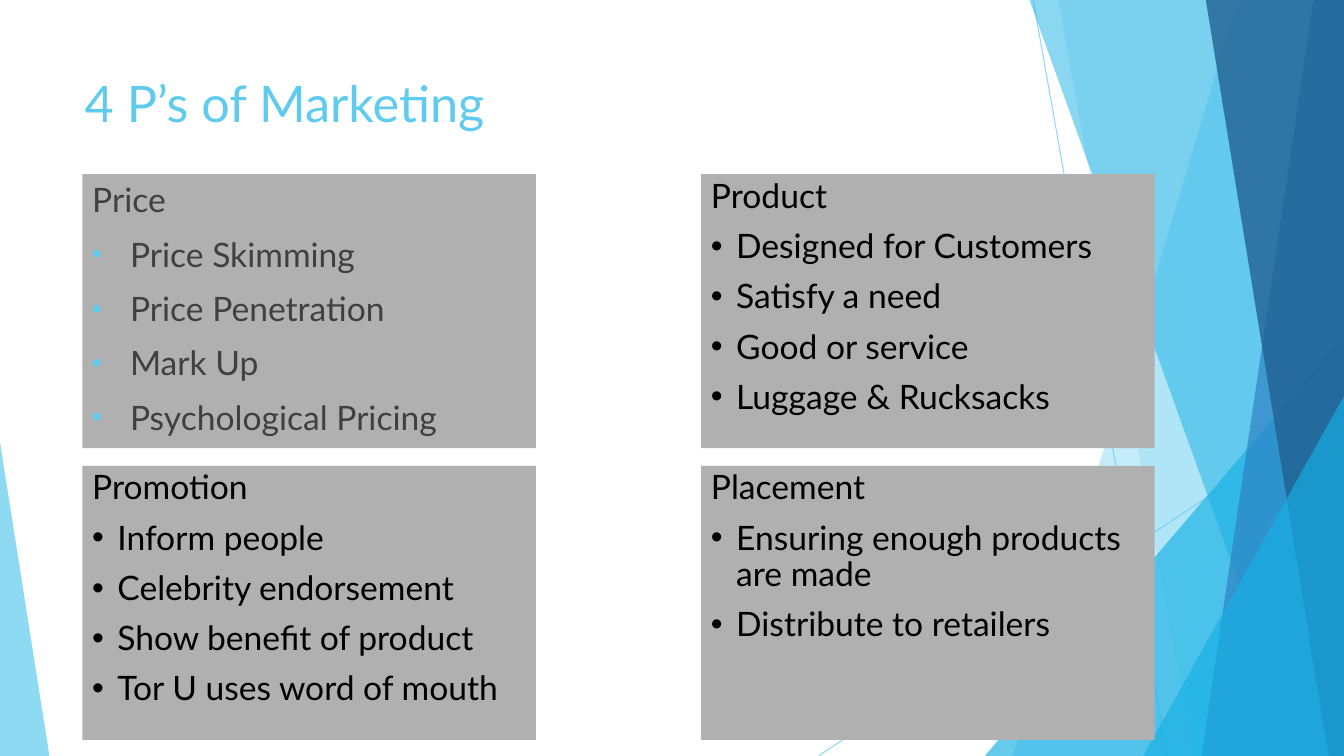
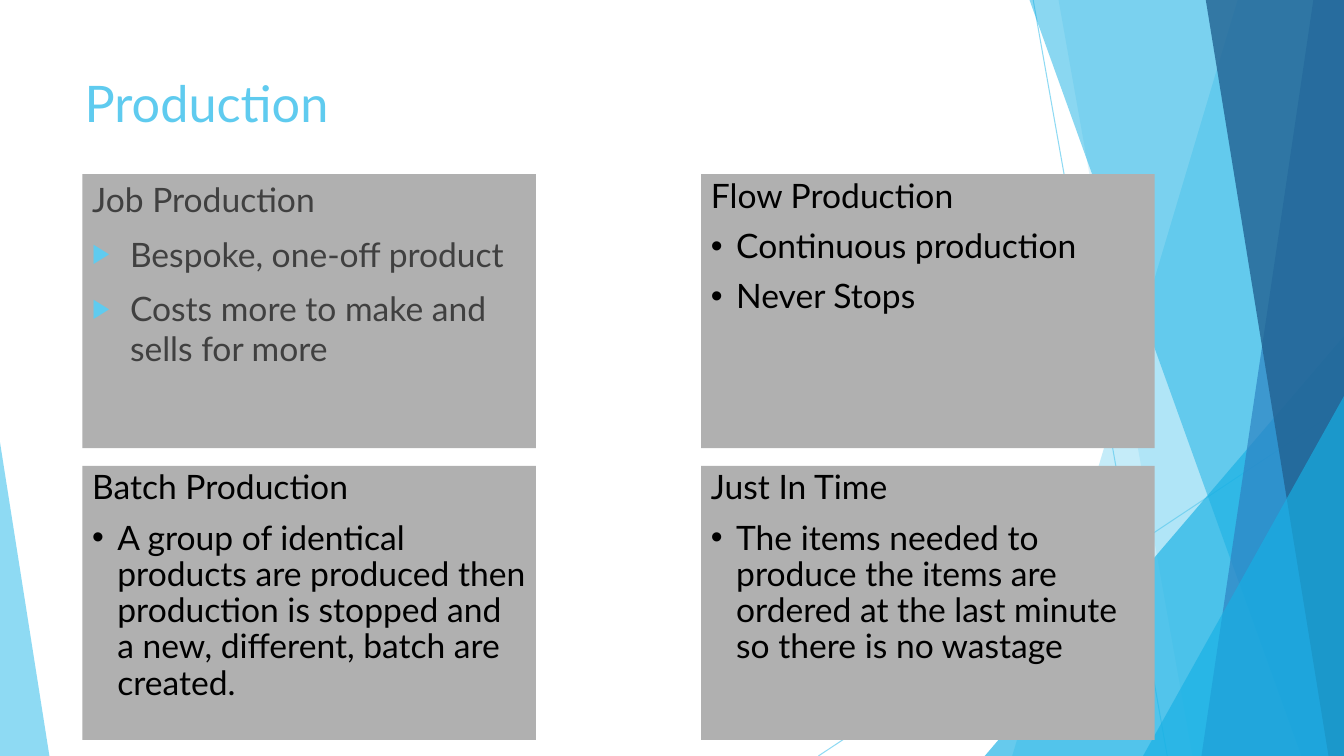
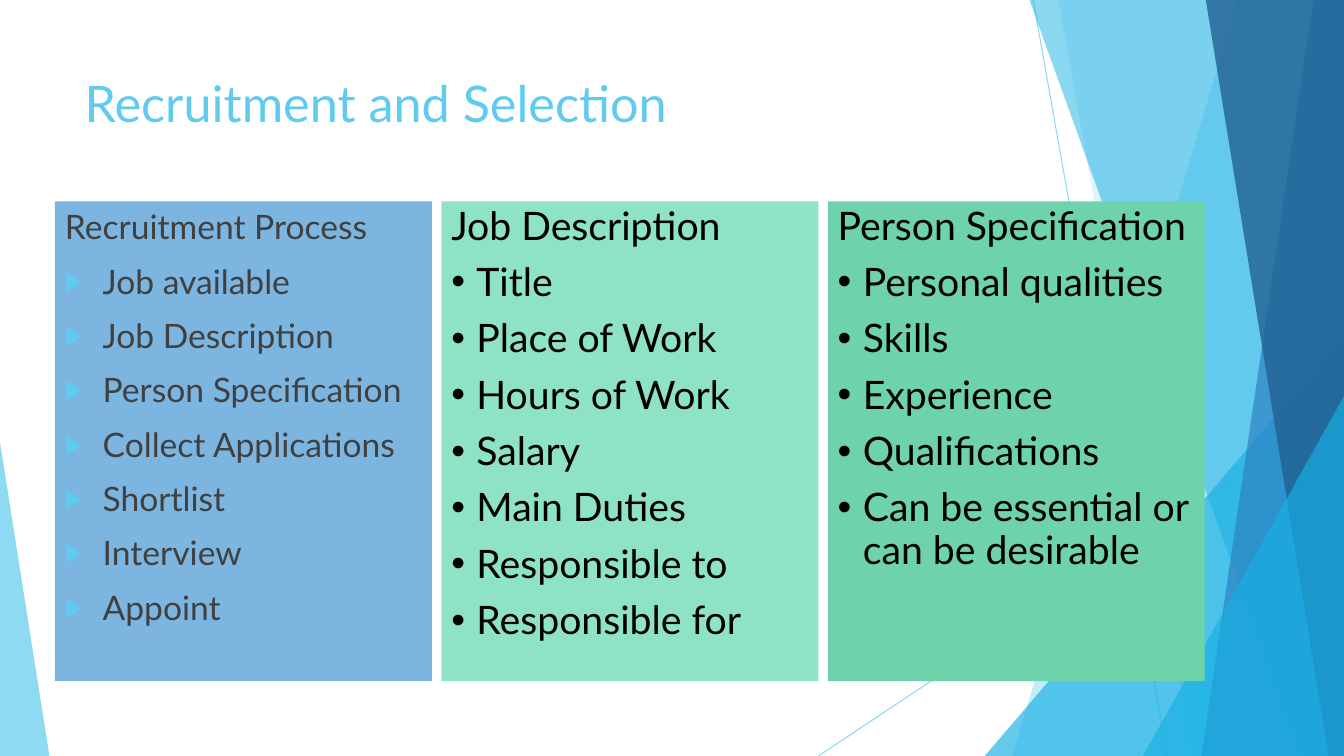
from collections import namedtuple

from lxml import etree
from pptx import Presentation
from pptx.dml.color import RGBColor
from pptx.enum.shapes import MSO_CONNECTOR, MSO_SHAPE
from pptx.enum.text import MSO_ANCHOR, PP_ALIGN
from pptx.oxml.ns import qn
from pptx.util import Pt

STRAIGHT = MSO_CONNECTOR.STRAIGHT
RECTANGLE = MSO_SHAPE.RECTANGLE
TRIANGLE = MSO_SHAPE.ISOSCELES_TRIANGLE
TOP = MSO_ANCHOR.TOP
LEFT = PP_ALIGN.LEFT

SKY = RGBColor(0x5F, 0xCB, 0xEF)
CYAN = RGBColor(0x17, 0xB0, 0xE4)
BLUE = RGBColor(0x2E, 0x83, 0xC3)
NAVY = RGBColor(0x22, 0x62, 0x92)
GREY = RGBColor(0xB0, 0xB0, 0xB0)
PALE_BLUE = RGBColor(0x7C, 0xB5, 0xE0)
MINT = RGBColor(0x8E, 0xE3, 0xC7)
GREEN = RGBColor(0x6E, 0xD2, 0xAA)
CHARCOAL = RGBColor(0x40, 0x40, 0x40)
BLACK = RGBColor(0x00, 0x00, 0x00)

FONT = "Lato"
WIDTH, HEIGHT = 960, 540
BAND_TOP = -0.6

Box = namedtuple("Box", "left top width height")
ListStyle = namedtuple("ListStyle", "mark indent color spacing mark_color")
Panel = namedtuple("Panel", "heading items style size fill")

SQUARE = ListStyle("▪", 27, CHARCOAL, 1.0, SKY)
ARROW = ListStyle("▶", 27, CHARCOAL, 1.0, SKY)
DOT = ListStyle("•", 18, BLACK, 0.9, None)

QUADRANTS = [
    Box(58.8 + 442 * column, 124.4 + 208.3 * row, 324, 195.8)
    for row in range(2) for column in range(2)
]
COLUMNS = [Box(39.3 + 276 * column, 143.8, 269.3, 342.8) for column in range(3)]

SLIDES = [
    ("4 P’s of Marketing", QUADRANTS, [
        Panel("Price", ["Price Skimming", "Price Penetration", "Mark Up",
                        "Psychological Pricing"], SQUARE, 24, GREY),
        Panel("Product", ["Designed for Customers", "Satisfy a need", "Good or service",
                          "Luggage & Rucksacks"], DOT, 24, GREY),
        Panel("Promotion", ["Inform people", "Celebrity endorsement",
                            "Show benefit of product",
                            "Tor U uses word of mouth"], DOT, 24, GREY),
        Panel("Placement", ["Ensuring enough products are made",
                            "Distribute to retailers"], DOT, 24, GREY),
    ]),
    ("Production", QUADRANTS, [
        Panel("Job Production", ["Bespoke, one-off product",
                                 "Costs more to make and sells for more"], ARROW, 24, GREY),
        Panel("Flow Production", ["Continuous production", "Never Stops"], DOT, 24, GREY),
        Panel("Batch Production", ["A group of identical products are produced then production "
                                   "is stopped and a new, different, batch are created."],
              DOT, 24, GREY),
        Panel("Just In Time", ["The items needed to produce the items are ordered at the "
                               "last minute so there is no wastage"], DOT, 24, GREY),
    ]),
    ("Recruitment and Selection", COLUMNS, [
        Panel("Recruitment Process", ["Job available", "Job Description", "Person Specification",
                                      "Collect Applications", "Shortlist", "Interview",
                                      "Appoint"], ARROW, 24, PALE_BLUE),
        Panel("Job Description", ["Title", "Place of Work", "Hours of Work", "Salary",
                                  "Main Duties", "Responsible to", "Responsible for"],
              DOT, 28, MINT),
        Panel("Person Specification", ["Personal qualities", "Skills", "Experience",
                                       "Qualifications", "Can be essential or can be desirable"],
              DOT, 28, GREEN),
    ]),
]


def set_opacity(shape, percent):
    """Make every colour of a shape partly transparent."""
    for color in shape.element.iter(qn("a:srgbClr")):
        etree.SubElement(color, qn("a:alpha")).set("val", str(percent * 1000))


def paint(shape, color, opacity=None):
    """Give a shape a plain fill with no outline or shadow."""
    shape.shadow.inherit = False
    shape.fill.solid()
    shape.fill.fore_color.rgb = color
    shape.line.fill.background()
    if opacity:
        set_opacity(shape, opacity)


def add_hairline(page, start_x, start_y, end_x, end_y):
    """Draw a thin translucent line."""
    line = page.shapes.add_connector(
        STRAIGHT, Pt(start_x), Pt(start_y), Pt(end_x), Pt(end_y))
    line.line.color.rgb = SKY
    line.line.width = Pt(0.75)
    set_opacity(line, 70)
    etree.SubElement(line.element.spPr, qn("a:effectLst"))


def add_band(page, top_x, bottom_x, color, opacity):
    """Fill from a slanted edge to the right side of the page."""
    outline = page.shapes.build_freeform(Pt(top_x), Pt(BAND_TOP))
    corners = [(WIDTH, BAND_TOP), (WIDTH, HEIGHT), (bottom_x, HEIGHT)]
    outline.add_line_segments([(Pt(x), Pt(y)) for x, y in corners], close=True)
    paint(outline.convert_to_shape(), color, opacity)


def add_corner(page, left, top, width, peak, color, opacity):
    """Draw a right triangle standing on the bottom of the page."""
    corner = page.shapes.add_shape(
        TRIANGLE, Pt(left), Pt(top), Pt(width), Pt(HEIGHT - top))
    corner.adjustments[0] = peak
    paint(corner, color, opacity)


def add_backdrop(page):
    """Draw the overlapping blue facets every slide shares."""
    add_hairline(page, 738, 0, 833.8, HEIGHT)
    add_hairline(page, WIDTH, 290.2, 584.6, HEIGHT)
    add_band(page, 884.2, 723, SKY, 36)
    add_band(page, 756, 851.8, SKY, 20)
    add_corner(page, 703.4, 240, 256.6, 1, CYAN, 66)
    add_band(page, 735.2, 929.5, CYAN, 50)
    add_band(page, 938.2, 858.2, BLUE, 70)
    add_band(page, 861.2, 949, NAVY, 80)
    add_corner(page, 816.5, 283, 143.5, 1, CYAN, 66)
    add_corner(page, 0, 316, 35.3, 0, SKY, 70)


def set_font(para, size, color):
    """Set the deck's typeface on a left-aligned paragraph."""
    para.alignment = LEFT
    para.font.name = FONT
    para.font.size = Pt(size)
    para.font.color.rgb = color


def add_title(page, text):
    """Place the slide title."""
    title = page.shapes.add_textbox(Pt(53.4), Pt(48), Pt(676.8), Pt(104))
    title.text_frame.word_wrap = True
    para = title.text_frame.paragraphs[0]
    para.text = text
    set_font(para, 36, SKY)


def add_bullet(para, style):
    """Give a paragraph a hanging bullet."""
    properties = para._p.get_or_add_pPr()
    properties.set("marL", str(Pt(style.indent)))
    properties.set("indent", str(-Pt(style.indent)))
    if style.mark_color:
        color = etree.SubElement(properties, qn("a:buClr"))
        etree.SubElement(color, qn("a:srgbClr")).set("val", str(style.mark_color))
        etree.SubElement(properties, qn("a:buSzPct")).set("val", "80000")
    etree.SubElement(properties, qn("a:buFont")).set("typeface", "Arial")
    etree.SubElement(properties, qn("a:buChar")).set("char", style.mark)


def add_panel(page, box, panel):
    """Fill a box with a heading and its bulleted list."""
    card = page.shapes.add_shape(RECTANGLE, *(Pt(length) for length in box))
    paint(card, panel.fill)
    frame = card.text_frame
    frame.word_wrap = True
    frame.vertical_anchor = TOP
    for index, text in enumerate([panel.heading, *panel.items]):
        para = frame.add_paragraph() if index else frame.paragraphs[0]
        para.text = text
        para.space_before = Pt(10)
        para.line_spacing = panel.style.spacing
        if index:
            add_bullet(para, panel.style)
        set_font(para, panel.size, panel.style.color)


def add_panel_slide(deck, title, boxes, panels):
    """Build one slide of panels under a title."""
    page = deck.slides.add_slide(deck.slide_layouts[6])
    add_backdrop(page)
    add_title(page, title)
    for box, panel in zip(boxes, panels):
        add_panel(page, box, panel)


def main():
    """Build and save the deck."""
    deck = Presentation()
    deck.slide_width, deck.slide_height = Pt(WIDTH), Pt(HEIGHT)
    for title, boxes, panels in SLIDES:
        add_panel_slide(deck, title, boxes, panels)
    deck.save("out.pptx")


if __name__ == "__main__":
    main()
